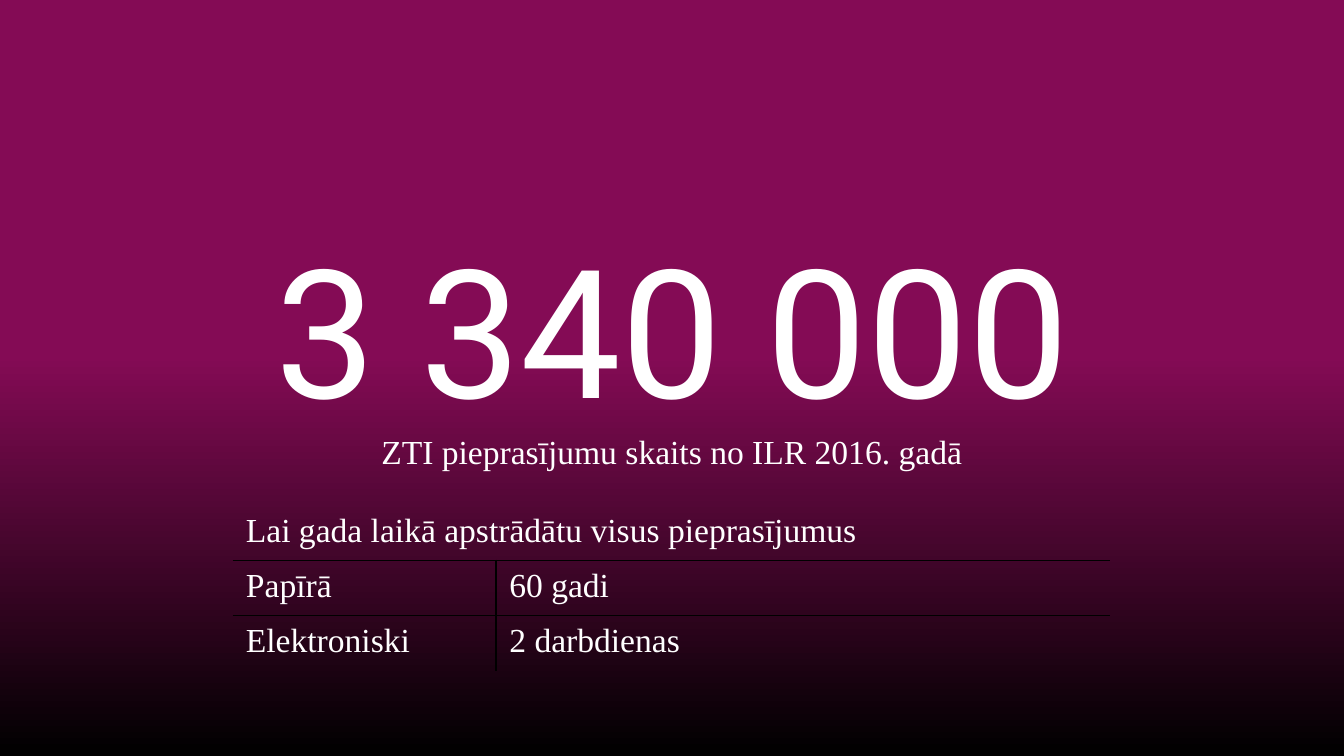
from lxml import etree
from pptx import Presentation
from pptx import util as u
from pptx.dml.color import RGBColor
from pptx.enum import text
from pptx.oxml.ns import qn

WHITE = "FFFFFF"
PURPLE = "840B55"
BLACK = "000000"
SERIF = "Times New Roman"
PLAIN_TABLE = "{2D5ABB26-0587-4C30-8999-92F81FD0307C}"
INSET = 7.2
LEFT, WIDTH = 54, 612


def color(value):
    return RGBColor.from_string(value)


def write(frame, words, font=SERIF, size=18, align=None):
    para = frame.paragraphs[0]
    para.alignment = align
    span = para.add_run()
    span.text = words
    span.font.name = font
    span.font.size = u.Pt(size)
    span.font.color.rgb = color(WHITE)


def paint_background(page):
    fill = page.background.fill
    fill.gradient()
    fill.gradient_angle = 270
    for stop, (position, value) in zip(fill.gradient_stops, [(0.47, PURPLE), (1, BLACK)]):
        stop.position = position
        stop.color.rgb = color(value)


def place(box, top, height):
    box.left, box.top = u.Pt(LEFT), u.Pt(top)
    box.width, box.height = u.Pt(WIDTH), u.Pt(height)


def format_frame(frame, anchor):
    frame.word_wrap = True
    frame.auto_size = text.MSO_AUTO_SIZE.NONE
    frame.vertical_anchor = anchor
    frame.margin_left = frame.margin_right = u.Pt(INSET)
    frame.margin_top = frame.margin_bottom = u.Pt(INSET)


def add_heading(box, words, top, height, anchor, **style):
    place(box, top, height)
    format_frame(box.text_frame, anchor)
    write(box.text_frame, words, align=text.PP_ALIGN.CENTER, **style)


def draw_borders(cell, sides):
    properties = cell._tc.get_or_add_tcPr()
    for side in "LRTB":
        if side in sides:
            line = etree.SubElement(properties, qn(f"a:ln{side}"), w=str(u.Pt(1)))
            fill = etree.SubElement(line, qn("a:solidFill"))
            etree.SubElement(fill, qn("a:srgbClr"), val=BLACK)


def add_duration_table(page):
    rows = [
        ("Lai gada laikā apstrādātu visus pieprasījumus", ""),
        ("Papīrā", "60 gadi"),
        ("Elektroniski", "2 darbdienas"),
    ]
    borders = [("B", "B"), ("RTB", "LTB"), ("RT", "LT")]
    widths = [141.12, 329.04]
    row_height = 29.52
    frame = page.shapes.add_table(
        len(rows), len(widths), u.Pt(124.56), u.Pt(270.72),
        u.Pt(sum(widths)), u.Pt(row_height * len(rows)))
    table = frame.table
    table.first_row = table.horz_banding = False
    table._tbl.tblPr.find(qn("a:tableStyleId")).text = PLAIN_TABLE
    for column, width in zip(table.columns, widths):
        column.width = u.Pt(width)
    for i, row in enumerate(rows):
        table.rows[i].height = u.Pt(row_height)
        for j, words in enumerate(row):
            cell = table.cell(i, j)
            draw_borders(cell, borders[i][j])
            cell.fill.background()
            if words:
                write(cell.text_frame, words)
    table.cell(0, 0).merge(table.cell(0, 1))


def main():
    deck = Presentation()
    deck.slide_width, deck.slide_height = u.Pt(720), u.Pt(405)
    page = deck.slides.add_slide(deck.slide_layouts[5])
    paint_background(page)
    add_heading(page.shapes.title, "3 340 000", 148.32, 91.44,
                text.MSO_ANCHOR.BOTTOM, font="Roboto", size=96)
    subtitle = page.shapes.add_textbox(0, 0, 0, 0)
    add_heading(subtitle, "ZTI pieprasījumu skaits no ILR 2016. gadā", 223.92, 35.28,
                text.MSO_ANCHOR.TOP)
    add_duration_table(page)
    deck.save("out.pptx")


if __name__ == "__main__":
    main()
